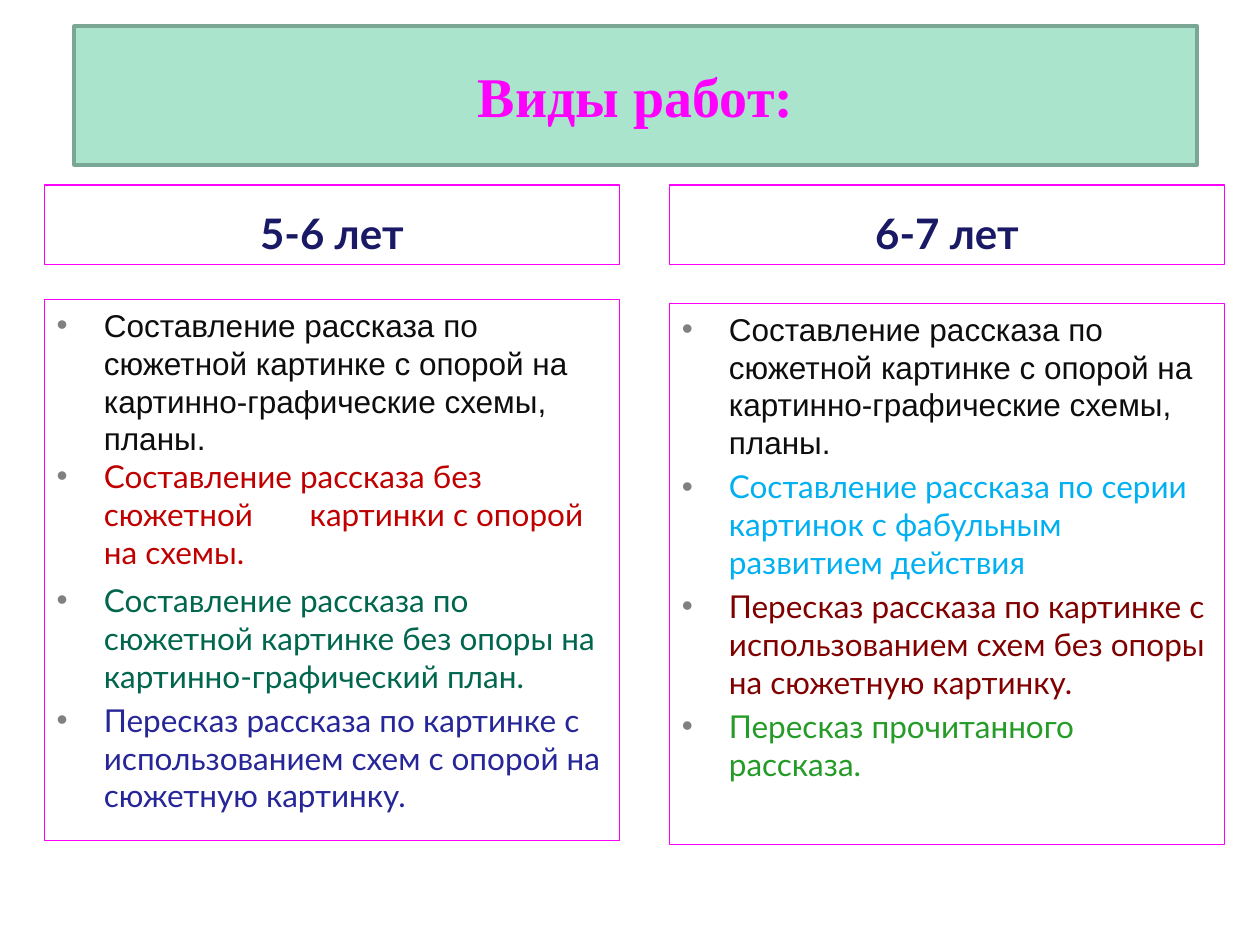
from lxml import etree
from pptx import Presentation
from pptx import util as u
from pptx.dml.color import RGBColor
from pptx.enum import text
from pptx.oxml.ns import qn

COLORS = {
    "magenta": "FF00FF", "mint": "ABE4CC", "sage": "7AA695",
    "navy": "191966", "bullet": "808080", "black": "0D0D0D",
    "red": "C00000", "green": "00664D", "indigo": "262699",
    "sky": "00B0F0", "maroon": "800000", "leaf": "259B28",
}
INDENT = u.Cm(0.95)
TAB_STOP = u.Cm(5.1)
LEFT_COLUMN = (0.89, 11.6)     # left edge and width in cm
RIGHT_COLUMN = (13.49, 11.2)

COMMON_TASK = ("Составление рассказа по сюжетной картинке с опорой на "
               "картинно-графические схемы, планы.")
# Each task: text, colour, font, points before
YOUNGER_TASKS = [
    (COMMON_TASK, "black", "Arial", 0),
    ("Составление рассказа без сюжетной\tкартинки с опорой на схемы.",
     "red", "Lato", 0),
    ("Составление рассказа по сюжетной картинке без опоры на "
     "картинно-графический план.", "green", "Lato", 6),
    ("Пересказ рассказа по картинке с использованием схем с опорой на "
     "сюжетную картинку.", "indigo", "Lato", 3.6),
]
OLDER_TASKS = [
    (COMMON_TASK, "black", "Arial", 0),
    ("Составление рассказа по серии картинок с фабульным развитием действия",
     "sky", "Lato", 3.6),
    ("Пересказ рассказа по картинке с использованием схем без опоры на "
     "сюжетную картинку.", "maroon", "Lato", 3.6),
    ("Пересказ прочитанного рассказа.", "leaf", "Lato", 3.6),
]


def rgb(name):
    return RGBColor.from_string(COLORS[name])


def place(shape, left, top, width, height, line="magenta", line_width=0.75,
          anchor=text.MSO_ANCHOR.TOP):
    """Move a placeholder, outline it and prepare its text frame."""
    shape.left, shape.top = u.Cm(left), u.Cm(top)
    shape.width, shape.height = u.Cm(width), u.Cm(height)
    shape.line.color.rgb = rgb(line)
    shape.line.width = u.Pt(line_width)
    frame = shape.text_frame
    frame.word_wrap = True
    frame.auto_size = text.MSO_AUTO_SIZE.NONE
    frame.vertical_anchor = anchor
    return frame


def write(paragraph, content, *, size, font, color, bold=False, before=0,
          spacing=1.0, align=text.PP_ALIGN.LEFT):
    paragraph.alignment = align
    paragraph.space_before = u.Pt(before)
    paragraph.line_spacing = spacing
    run = paragraph.add_run()
    run.text = content
    run.font.size = u.Pt(size)
    run.font.name = font
    run.font.bold = bold
    run.font.color.rgb = rgb(color)


def add_bullet(paragraph, tabbed):
    properties = paragraph._p.get_or_add_pPr()
    properties.set("marL", str(INDENT))
    properties.set("indent", str(-INDENT))
    bullet_color = etree.SubElement(properties, qn("a:buClr"))
    etree.SubElement(bullet_color, qn("a:srgbClr"), val=COLORS["bullet"])
    etree.SubElement(properties, qn("a:buFont"), typeface="Arial")
    etree.SubElement(properties, qn("a:buChar"), char="•")
    if tabbed:
        tabs = etree.SubElement(properties, qn("a:tabLst"))
        etree.SubElement(tabs, qn("a:tab"), pos=str(TAB_STOP), algn="l")


def fill_title(shape, content):
    frame = place(shape, 1.5, 0.53, 22.63, 2.79, line="sage", line_width=2.25,
                  anchor=text.MSO_ANCHOR.MIDDLE)
    shape.fill.solid()
    shape.fill.fore_color.rgb = rgb("mint")
    write(frame.paragraphs[0], content, size=32, font="Times New Roman",
          color="magenta", bold=True, align=text.PP_ALIGN.CENTER)


def fill_heading(shape, column, content):
    left, width = column
    frame = place(shape, left, 3.73, width, 1.6,
                  anchor=text.MSO_ANCHOR.BOTTOM)
    write(frame.paragraphs[0], content, size=24, font="Lato", color="navy",
          bold=True, spacing=1.25, align=text.PP_ALIGN.CENTER)


def fill_list(shape, column, top, tasks):
    left, width = column
    frame = place(shape, left, top, width, 10.9)
    for index, (content, color, font, before) in enumerate(tasks):
        paragraph = frame.add_paragraph() if index else frame.paragraphs[0]
        add_bullet(paragraph, "\t" in content)
        write(paragraph, content, size=18, font=font, color=color,
              before=before)


def main():
    presentation = Presentation()
    presentation.slide_width, presentation.slide_height = u.Cm(25.4), u.Cm(19.05)
    comparison = presentation.slide_layouts.get_by_name("Comparison")
    slide = presentation.slides.add_slide(comparison)
    title, left_head, left_list, right_head, right_list = slide.placeholders

    # Title banner
    fill_title(title, "Виды работ:")

    # Two age groups
    fill_heading(left_head, LEFT_COLUMN, "5-6 лет")
    fill_list(left_list, LEFT_COLUMN, 6.04, YOUNGER_TASKS)
    fill_heading(right_head, RIGHT_COLUMN, "6-7 лет")
    fill_list(right_list, RIGHT_COLUMN, 6.12, OLDER_TASKS)

    presentation.save("out.pptx")


if __name__ == "__main__":
    main()
